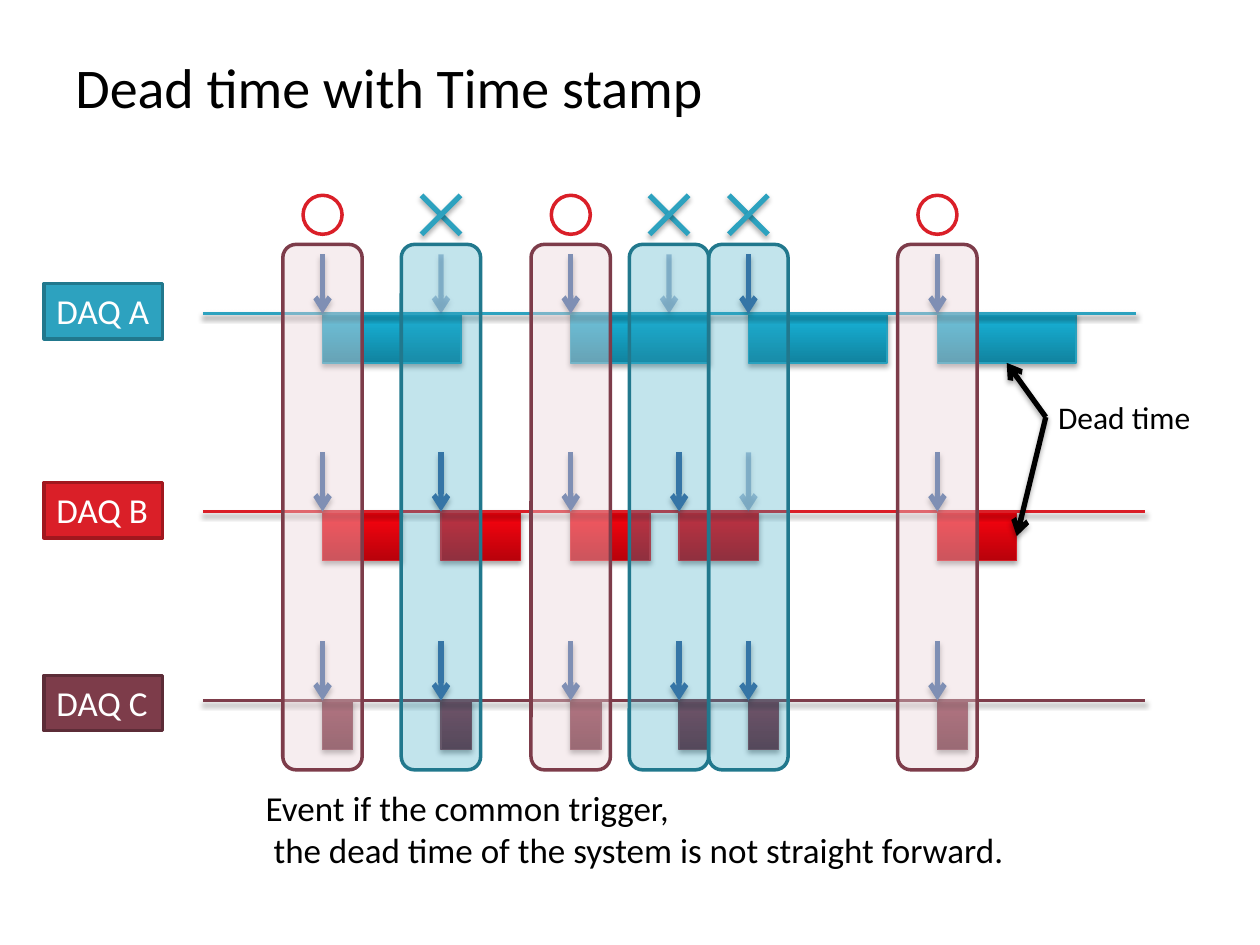
from copy import deepcopy
from dataclasses import dataclass

from lxml.etree import SubElement
from pptx import Presentation
from pptx.dml.color import RGBColor
from pptx.enum.shapes import MSO_CONNECTOR, MSO_SHAPE
from pptx.enum.text import MSO_ANCHOR, MSO_AUTO_SIZE
from pptx.oxml.ns import qn
from pptx.util import Inches, Pt


@dataclass(frozen=True)
class Theme:
    font: str = "Calibri"
    title: int = 32
    body: int = 20
    note: int = 18
    black: str = "000000"
    white: str = "FFFFFF"
    teal: str = "2DA2BF"
    teal_dark: str = "21788D"
    red: str = "DA1F28"
    red_dark: str = "A1171E"
    plum: str = "7D3C4A"
    plum_dark: str = "5C2C37"
    pink: str = "EAD3D8"
    trigger: str = "39639D"
    teal_edge: str = "28A1BE"
    red_edge: str = "DA1A23"
    plum_edge: str = "7C3947"
    teal_gradient: tuple = ("11839F", "16AACE", "13ADD3")
    red_gradient: tuple = ("B8020B", "EE030E", "F2000C")
    plum_gradient: tuple = ("652533", "833142", "852F42")


@dataclass(frozen=True)
class Channel:
    name: str
    y: float
    label_top: float
    end: float
    dead: float
    color: str
    border: str
    edge: str
    gradient: tuple
    hits: tuple
    missed: tuple = ()


T = Theme()
CHANNELS = (
    Channel("DAQ A", 2.49, 2.25, 9.02, 1.1, T.teal, T.teal_dark, T.teal_edge,
            T.teal_gradient, (2.56, 4.53, 5.94, 7.44), (3.5, 5.31)),
    Channel("DAQ B", 4.06, 3.83, 9.09, 0.63, T.red, T.red_dark, T.red_edge,
            T.red_gradient, (2.56, 3.5, 4.53, 5.39, 7.44), (5.94,)),
    Channel("DAQ C", 5.56, 5.36, 9.09, 0.24, T.plum, T.plum_dark, T.plum_edge,
            T.plum_gradient, (2.56, 3.5, 4.53, 5.39, 5.94, 7.44)),
)
ACCEPTED = (2.56, 4.53, 7.44)
REJECTED = (3.5, 5.31, 5.94)


def paint(fill, color, alpha=100):
    fill.solid()
    fill.fore_color.rgb = RGBColor.from_string(color)
    if alpha < 100:
        clr = fill._xPr.find(f"{qn('a:solidFill')}/{qn('a:srgbClr')}")
        SubElement(clr, qn("a:alpha"), val=str(alpha * 1000))


def set_line(line, color, width, alpha=100):
    line.width = Pt(width)
    paint(line.fill, color, alpha)


def set_shadow(sp, opacity=0, distance=1.8):
    effects = SubElement(sp._element.spPr, qn("a:effectLst"))
    if opacity:
        shadow = SubElement(effects, qn("a:outerShdw"), blurRad=str(Pt(3.1)),
                            dist=str(Pt(distance)), dir="5400000", rotWithShape="0")
        clr = SubElement(shadow, qn("a:srgbClr"), val=T.black)
        SubElement(clr, qn("a:alpha"), val=str(opacity * 1000))


def add_box(shapes, kind, left, top, width, height, fill, line, line_width=2, alpha=100):
    sp = shapes.add_shape(kind, Inches(left), Inches(top), Inches(width), Inches(height))
    paint(sp.fill, fill, alpha)
    set_line(sp.line, line, line_width)
    set_shadow(sp)
    return sp


def add_dead_time(s, left, channel):
    sp = s.shapes.add_shape(MSO_SHAPE.RECTANGLE, Inches(left), Inches(channel.y),
                            Inches(channel.dead), Inches(0.39))
    sp.fill.gradient()
    sp.fill.gradient_angle = 90
    stops = sp._element.spPr.find(f".//{qn('a:gsLst')}")
    stops.append(deepcopy(stops[-1]))
    for stop, position, color in zip(sp.fill.gradient_stops, (0, 0.8, 1), channel.gradient):
        stop.position = position
        stop.color.rgb = RGBColor.from_string(color)
    set_line(sp.line, channel.edge, 0.75)
    set_shadow(sp, 35)
    return sp


def add_line(shapes, start, end, color, width=3, alpha=100, arrow=False,
             opacity=35, distance=1.8):
    cxn = shapes.add_connector(MSO_CONNECTOR.STRAIGHT, *map(Inches, start + end))
    set_line(cxn.line, color, width, alpha)
    if arrow:
        SubElement(cxn.line.fill._xPr, qn("a:tailEnd"), type="arrow")
    set_shadow(cxn, opacity, distance)
    return cxn


def add_text(s, text, left, top, width, height, size=T.body, color=T.black,
             wrap=False, anchor=MSO_ANCHOR.TOP, fill=None, border=None):
    sp = s.shapes.add_textbox(Inches(left), Inches(top), Inches(width), Inches(height))
    tf = sp.text_frame
    tf.word_wrap = wrap
    tf.vertical_anchor = anchor
    tf.auto_size = MSO_AUTO_SIZE.NONE if wrap else MSO_AUTO_SIZE.SHAPE_TO_FIT_TEXT
    tf.text = text
    for p in tf.paragraphs:
        for r in p.runs:
            r.font.name = T.font
            r.font.size = Pt(size)
            r.font.color.rgb = RGBColor.from_string(color)
    if fill:
        paint(sp.fill, fill)
        set_line(sp.line, border, 2)
    return sp


def add_window(s, x, accepted):
    shapes = s.shapes.add_group_shape().shapes
    left, right, top, bottom = x - 0.155, x + 0.155, 1.55, 1.86
    if accepted:
        add_box(shapes, MSO_SHAPE.OVAL, left, top, 0.31, 0.31, T.white, T.red)
        fill, border, alpha = T.pink, T.plum, 40
    else:
        add_line(shapes, (left, top), (right, bottom), T.teal)
        add_line(shapes, (left, bottom), (right, top), T.teal)
        fill, border, alpha = T.teal, T.teal_dark, 29
    add_box(shapes, MSO_SHAPE.ROUNDED_RECTANGLE, x - 0.315, 1.94, 0.63, 4.17,
            fill, border, alpha=alpha)


def add_trigger(s, x, y, alpha=100):
    add_line(s.shapes, (x, y - 0.47), (x, y), T.trigger, alpha=alpha, arrow=True)


def add_channel(s, channel):
    blocks = [add_dead_time(s, x, channel) for x in channel.hits]
    add_line(s.shapes, (1.61, channel.y), (channel.end, channel.y), channel.color,
             width=2, opacity=38, distance=1.6)
    for x in channel.hits:
        add_trigger(s, x, channel.y)
    for x in channel.missed:
        add_trigger(s, x, channel.y, alpha=40)
    add_text(s, channel.name, 0.35, channel.label_top, 0.94, 0.44, color=T.white,
             fill=channel.color, border=channel.border)
    return blocks[-1]


def add_callout(s, block_a, block_b):
    label = add_text(s, "Dead time", 8.3, 3.11, 1.27, 0.4, size=T.note)
    for block, end, side in ((block_a, (7.99, 2.88), 2), (block_b, (8.07, 4.26), 3)):
        cxn = add_line(s.shapes, (8.3, 3.31), end, T.black, arrow=True)
        cxn.begin_connect(label, 1)
        cxn.end_connect(block, side)


def main():
    prs = Presentation()
    prs.slide_width, prs.slide_height = Inches(10), Inches(7.5)
    s = prs.slides.add_slide(prs.slide_layouts[6])
    add_text(s, "Dead time with Time stamp", 0.5, 0.3, 9, 0.77, size=T.title,
             wrap=True, anchor=MSO_ANCHOR.MIDDLE)
    block_a, block_b, _ = [add_channel(s, channel) for channel in CHANNELS]
    add_text(s, "Event if the common trigger,\n"
                " the dead time of the system is not straight forward.",
             2.01, 6.19, 6.12, 0.77)
    add_callout(s, block_a, block_b)
    for x in ACCEPTED:
        add_window(s, x, True)
    for x in REJECTED:
        add_window(s, x, False)
    prs.save("out.pptx")


if __name__ == "__main__":
    main()
